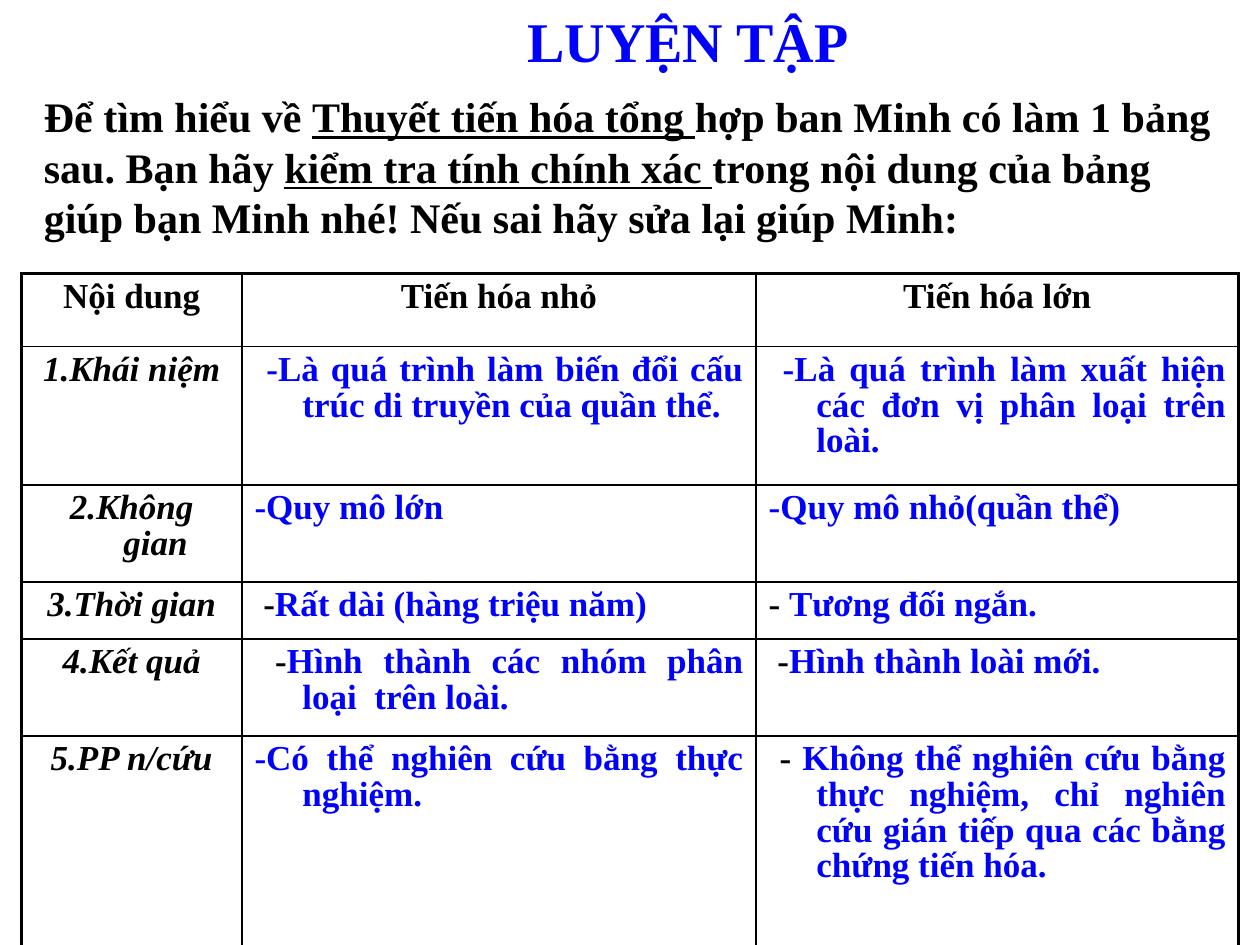
import pptx
import pptx.dml.color
import pptx.enum.text
import pptx.oxml
import pptx.oxml.ns
import pptx.util
from pptx.util import Inches

BLACK = pptx.dml.color.RGBColor(0, 0, 0)
BLUE = pptx.dml.color.RGBColor(0, 0, 255)
FONT = "Times New Roman"
CENTER = pptx.enum.text.PP_ALIGN.CENTER
JUSTIFY = pptx.enum.text.PP_ALIGN.JUSTIFY

COLUMN_WIDTHS = [1.75, 4.08, 3.83]
ROW_HEIGHTS = [0.58, 1.1, 0.77, 0.45, 0.77, 1.77]
HEADINGS = ["Nội dung", "Tiến hóa nhỏ", "Tiến hóa lớn"]
# Each answer is a pair: black lead-in, blue wording.
ROWS = [
    ("1.Khái niệm",
     ("", " -Là quá trình làm biến đổi cấu trúc di truyền của quần thể."),
     ("", " -Là quá trình làm xuất hiện các đơn vị phân loại trên loài.")),
    ("2.Không gian", ("", "-Quy mô lớn"), ("", "-Quy mô nhỏ(quần thể)")),
    ("3.Thời gian", (" -", "Rất dài (hàng triệu năm)"), ("- ", "Tương đối ngắn.")),
    ("4.Kết quả", (" -", "Hình thành các nhóm phân loại  trên loài."),
     (" -", "Hình thành loài mới.")),
    ("5.PP n/cứu", ("", "-Có thể nghiên cứu bằng thực nghiệm."),
     (" - ", "Không thể nghiên cứu bằng thực nghiệm, chỉ nghiên cứu gián tiếp "
             "qua các bằng chứng tiến hóa.")),
]
INTRODUCTION = [
    ("Để tìm hiểu về ", False),
    ("Thuyết tiến hóa tổng ", True),
    ("hợp ban Minh có làm 1 bảng sau. Bạn hãy ", False),
    ("kiểm tra tính chính xác ", True),
    ("trong nội dung của bảng giúp bạn Minh nhé! Nếu sai hãy sửa lại giúp Minh:", False),
]


def add_text(paragraph, text, size=20, color=BLACK, italic=False, underline=False):
    run = paragraph.add_run()
    run.text = text
    font = run.font
    font.name, font.size, font.bold = FONT, pptx.util.Pt(size), True
    font.italic, font.underline = italic, underline
    font.color.rgb = color


def add_text_box(slide, left, top, width, height):
    """Add a wrapping text box and return its first paragraph."""
    box = slide.shapes.add_textbox(Inches(left), Inches(top), Inches(width), Inches(height))
    box.text_frame.word_wrap = True
    return box.text_frame.paragraphs[0]


def set_borders(cell, widths):
    """Draw black borders; widths are points for left, right, top, bottom."""
    properties = cell._tc.get_or_add_tcPr()
    for index, (side, width) in enumerate(zip("LRTB", widths)):
        line = pptx.oxml.parse_xml(
            f'<a:ln{side} {pptx.oxml.ns.nsdecls("a")} w="{pptx.util.Pt(width)}">'
            f'<a:solidFill><a:srgbClr val="{BLACK}"/></a:solidFill></a:ln{side}>')
        properties.insert(index, line)


def format_cell(cell, alignment):
    """Clear the fill, set a hanging indent and return the paragraph."""
    cell.fill.background()
    paragraph = cell.text_frame.paragraphs[0]
    paragraph.alignment = alignment
    paragraph.line_spacing = 0.92
    properties = paragraph._p.get_or_add_pPr()
    properties.set("marL", str(Inches(0.38)))
    properties.set("indent", str(-Inches(0.38)))
    return paragraph


def add_comparison_table(slide):
    table = slide.shapes.add_table(
        len(ROW_HEIGHTS), len(COLUMN_WIDTHS), Inches(0.17), Inches(2.17),
        Inches(sum(COLUMN_WIDTHS)), Inches(sum(ROW_HEIGHTS))).table
    table.first_row = table.horz_banding = False
    for column, width in zip(table.columns, COLUMN_WIDTHS):
        column.width = Inches(width)
    for row, height in zip(table.rows, ROW_HEIGHTS):
        row.height = Inches(height)

    for column, heading in enumerate(HEADINGS):
        add_text(format_cell(table.cell(0, column), CENTER), heading)
    for row, (topic, *answers) in enumerate(ROWS, start=1):
        add_text(format_cell(table.cell(row, 0), CENTER), topic, italic=True)
        for column, (lead, wording) in enumerate(answers, start=1):
            paragraph = format_cell(table.cell(row, column), JUSTIFY)
            if lead:
                add_text(paragraph, lead)
            add_text(paragraph, wording, color=BLUE)

    last_row, last_column = len(ROW_HEIGHTS) - 1, len(COLUMN_WIDTHS) - 1
    for row in range(last_row + 1):
        for column in range(last_column + 1):
            outer = (column == 0, column == last_column, row == 0, row == last_row)
            set_borders(table.cell(row, column), [2 if edge else 1 for edge in outer])


def main():
    presentation = pptx.Presentation()
    presentation.slide_width, presentation.slide_height = Inches(10), Inches(7.5)
    slide = presentation.slides.add_slide(presentation.slide_layouts[6])

    title = add_text_box(slide, 3, 0, 4.92, 0.64)
    title.alignment = CENTER
    add_text(title, "LUYỆN TẬP", size=32, color=BLUE)
    add_comparison_table(slide)
    introduction = add_text_box(slide, 0.25, 0.67, 9.5, 1.31)
    for text, underline in INTRODUCTION:
        add_text(introduction, text, size=24, underline=underline)
    presentation.save("out.pptx")


if __name__ == "__main__":
    main()
